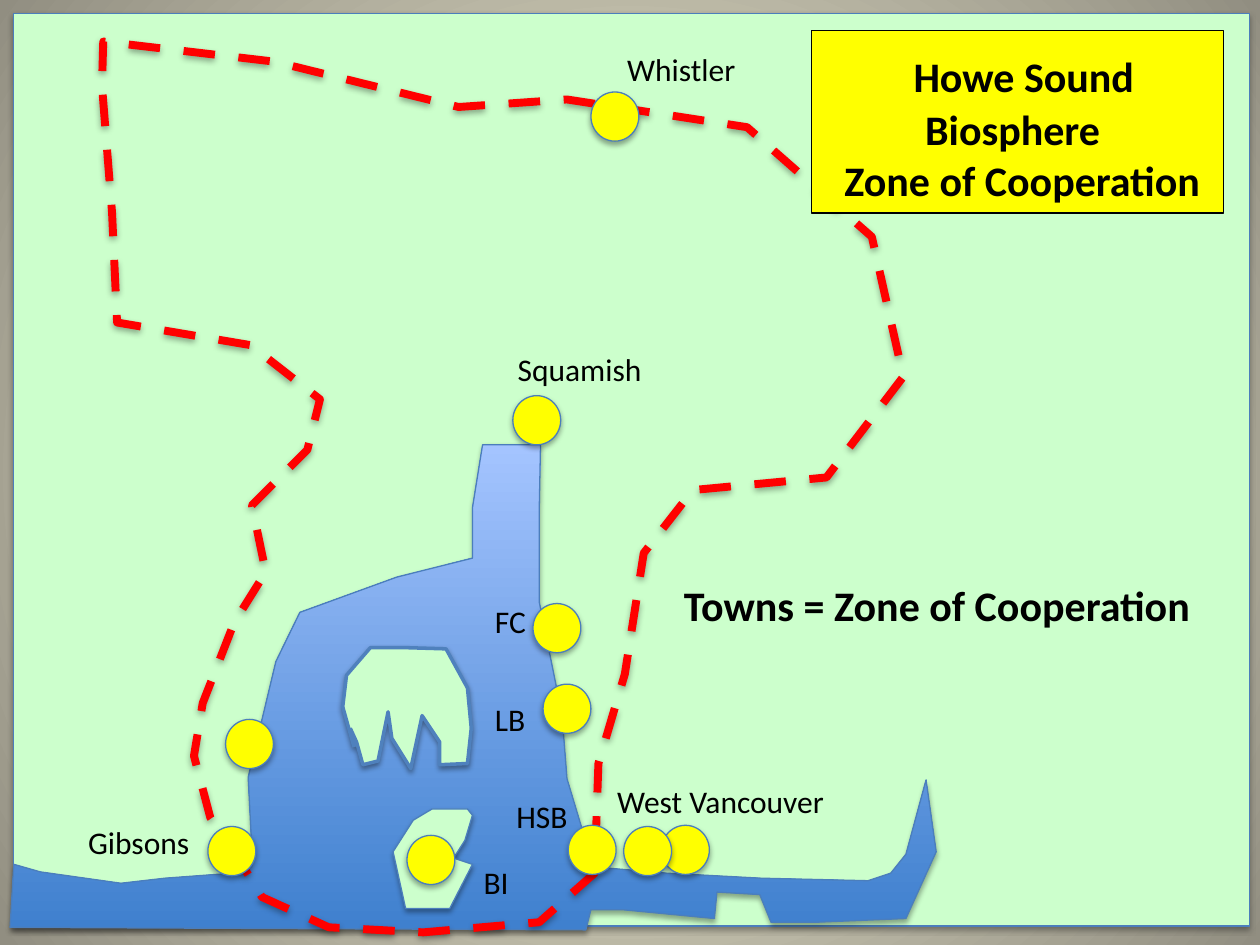
from lxml import etree
from pptx import Presentation
from pptx import util as u
from pptx.dml import color
from pptx.enum import dml, shapes, text
from pptx.oxml import ns

COLORS = {
    "land": "CCFFCC",
    "town": "FFFF00",
    "outline": "4B7EBC",
    "island_outline": "4F81BD",
    "boundary": "FF0000",
    "ink": "000000",
    "sea_deep": "3F80CE",
    "sea_light": "A4C4FF",
    "frame_light": "FCF7DD",
    "frame_dark": "918E81",
}
TOWN_SIZE = (0.38, 0.39)

SEA = [
    (0.32, 6.92), (0.96, 7.01), (1.31, 6.97), (1.85, 6.93), (2, 6.88), (2, 6.75),
    (1.97, 6.17), (2.19, 5.25), (2.38, 4.86), (3.15, 4.58), (3.75, 4.43), (3.75, 4.03),
    (3.83, 3.53), (4.29, 3.53), (4.28, 4.03), (4.28, 4.78), (4.46, 5.67), (4.5, 6.18),
    (4.71, 6.88), (5.29, 6.93), (6.04, 6.97), (6.89, 6.99), (7.07, 6.93), (7.19, 6.78),
    (7.35, 6.19), (7.43, 6.76), (7.19, 7.29), (6.47, 7.32), (6.12, 7.32), (6.03, 7.1),
    (5.69, 7.08), (5.67, 7.29), (4.94, 7.22), (4.69, 7.22), (4.65, 7.38), (0.08, 7.36),
    (0.11, 6.86),
]
NORTH_ISLAND = [
    (2.81, 5.93), (2.72, 5.61), (2.75, 5.36), (2.94, 5.14), (3.21, 5.14), (3.54, 5.15),
    (3.71, 5.46), (3.74, 5.78), (3.71, 6.06), (3.49, 6.07), (3.49, 5.89), (3.35, 5.68),
    (3.26, 6.1), (3.11, 5.86), (3.08, 5.65), (3, 6.04), (2.88, 6.07), (2.83, 5.89),
    (2.78, 5.78),
]
SOUTH_ISLAND = [
    (3.71, 6.42), (3.43, 6.42), (3.28, 6.51), (3.12, 6.76), (3.22, 7.21), (3.57, 7.21),
    (3.75, 6.86), (3.6, 6.81), (3.69, 6.67), (3.75, 6.47),
]
BOUNDARY = [
    (1.92, 6.86), (1.67, 6.49), (1.54, 6), (1.61, 5.58), (1.86, 4.94), (2.11, 4.54),
    (2, 4.01), (2.44, 3.57), (2.54, 3.17), (1.99, 2.74), (0.93, 2.56), (0.89, 1.69),
    (0.81, 0.68), (0.82, 0.33), (2.18, 0.49), (3.64, 0.85), (4.5, 0.79), (5.93, 1.01),
    (6.92, 1.88), (7.17, 2.99), (6.56, 3.79), (5.5, 3.89), (5.11, 4.39), (4.96, 5.35),
    (4.75, 6.06), (4.72, 6.93), (4.28, 7.32), (3.36, 7.4), (2.61, 7.36), (2.08, 7.12),
]
TOWNS = [
    (4.51, 6.55), (4.07, 3.14), (4.31, 5.43), (1.79, 5.71), (1.65, 6.56),
    (4.69, 0.73), (4.23, 4.79), (5.25, 6.55), (4.95, 6.56), (3.23, 6.63),
]
LABELS = [
    ("Squamish", 4.01, 2.73, 1.2),
    ("Whistler", 4.88, 0.35, 1.07),
    ("Gibsons", 0.6, 6.48, 1.02),
    ("HSB", 4, 6.28, 0.61),
    ("FC", 3.83, 4.73, 0.45),
    ("LB", 3.83, 5.51, 0.45),
    ("BI", 3.74, 6.8, 0.4),
    ("West Vancouver", 4.8, 6.16, 1.89),
]


def rgb(name):
    return color.RGBColor.from_string(COLORS[name])


def add_span(para, content, size=18, bold=False, ink="ink"):
    span = para.add_run()
    span.text = content
    span.font.name = "Calibri"
    span.font.size = u.Pt(size)
    span.font.bold = bold
    span.font.color.rgb = rgb(ink)


def set_gradient(fill, first, last):
    fill.gradient()
    for stop, name, position in zip(fill.gradient_stops, (first, last), (0, 1)):
        stop.color.rgb = rgb(name)
        stop.position = position


class MapSlide:
    def __init__(self, slide):
        self.slide = slide

    def background(self):
        fill = self.slide.background.fill
        set_gradient(fill, "frame_light", "frame_dark")
        properties = self.slide.background._cSld.bg.bgPr
        linear = properties.find(".//" + ns.qn("a:lin"))
        radial = etree.Element(ns.qn("a:path"), {"path": "circle"})
        sides = dict.fromkeys("ltrb", "50000")
        etree.SubElement(radial, ns.qn("a:fillToRect"), sides)
        linear.getparent().replace(linear, radial)

    def shadow(self, shape, blur=3.1, distance=1.8, opacity=35):
        shape.shadow.inherit = False
        effects = shape.element.spPr.find(ns.qn("a:effectLst"))
        outer = etree.SubElement(effects, ns.qn("a:outerShdw"), {
            "blurRad": str(u.Pt(blur)), "dist": str(u.Pt(distance)),
            "dir": "5400000", "rotWithShape": "0"})
        tint = etree.SubElement(outer, ns.qn("a:srgbClr"), val=COLORS["ink"])
        etree.SubElement(tint, ns.qn("a:alpha"), val=str(opacity * 1000))

    def paint(self, shape, fill=None, line="outline", width=0.75):
        if fill:
            shape.fill.solid()
            shape.fill.fore_color.rgb = rgb(fill)
        else:
            shape.fill.background()
        shape.line.color.rgb = rgb(line)
        shape.line.width = u.Pt(width)

    def preset(self, kind, left, top, width, height, fill):
        shape = self.slide.shapes.add_shape(
            kind, u.Inches(left), u.Inches(top), u.Inches(width), u.Inches(height))
        self.paint(shape, fill)
        self.shadow(shape)

    def outline(self, points, close=True, shadow=None, **style):
        start, *rest = [(u.Inches(x), u.Inches(y)) for x, y in points]
        builder = self.slide.shapes.build_freeform(*start)
        builder.add_line_segments(rest, close=close)
        shape = builder.convert_to_shape()
        self.paint(shape, **style)
        self.shadow(shape, **(shadow or {}))
        return shape

    def label(self, content, left, top, width, height=0.4, wrap=False, **style):
        box = self.slide.shapes.add_textbox(
            u.Inches(left), u.Inches(top), u.Inches(width), u.Inches(height))
        frame = box.text_frame
        frame.word_wrap = wrap
        frame.auto_size = text.MSO_AUTO_SIZE.SHAPE_TO_FIT_TEXT
        add_span(frame.paragraphs[0], content, **style)

    def title(self, lines, left, top, width, height):
        box = self.slide.shapes.title
        box.left, box.top = u.Inches(left), u.Inches(top)
        box.width, box.height = u.Inches(width), u.Inches(height)
        self.paint(box, "town", "ink")
        frame = box.text_frame
        frame.word_wrap = True
        frame.auto_size = text.MSO_AUTO_SIZE.NONE
        frame.vertical_anchor = text.MSO_ANCHOR.TOP
        for index, spans in enumerate(lines):
            para = frame.add_paragraph() if index else frame.paragraphs[0]
            para.alignment = text.PP_ALIGN.CENTER
            for content, size in spans:
                add_span(para, content, size=size, bold=True)
        box.element.getparent().append(box.element)


def main():
    deck = Presentation()
    deck.slide_width, deck.slide_height = u.Inches(10), u.Inches(7.5)
    page = MapSlide(deck.slides.add_slide(deck.slide_layouts[5]))
    page.background()
    page.preset(shapes.MSO_SHAPE.RECTANGLE, 0.11, 0.11, 9.81, 7.24, "land")

    sea = page.outline(SEA)
    set_gradient(sea.fill, "sea_deep", "sea_light")
    sea.fill.gradient_angle = 90
    page.outline(NORTH_ISLAND, close=False, fill="land", line="island_outline", width=2,
                 shadow={"distance": 1.6, "opacity": 38})
    page.outline(SOUTH_ISLAND, fill="land")
    boundary = page.outline(BOUNDARY, line="boundary", width=4.5)
    boundary.line.dash_style = dml.MSO_LINE.DASH

    for left, top in TOWNS:
        page.preset(shapes.MSO_SHAPE.OVAL, left, top, *TOWN_SIZE, "town")
    for content, left, top, width in LABELS:
        page.label(content, left, top, width)
    page.label("Towns = Zone of Cooperation", 5.33, 4.55, 4.49, 0.5,
               wrap=True, size=24, bold=True)
    page.title([[(" ", 32), ("Howe Sound Biosphere ", 24)],
                [(" Zone of Cooperation", 24)]], 6.44, 0.24, 3.27, 1.45)
    deck.save("out.pptx")


if __name__ == "__main__":
    main()
